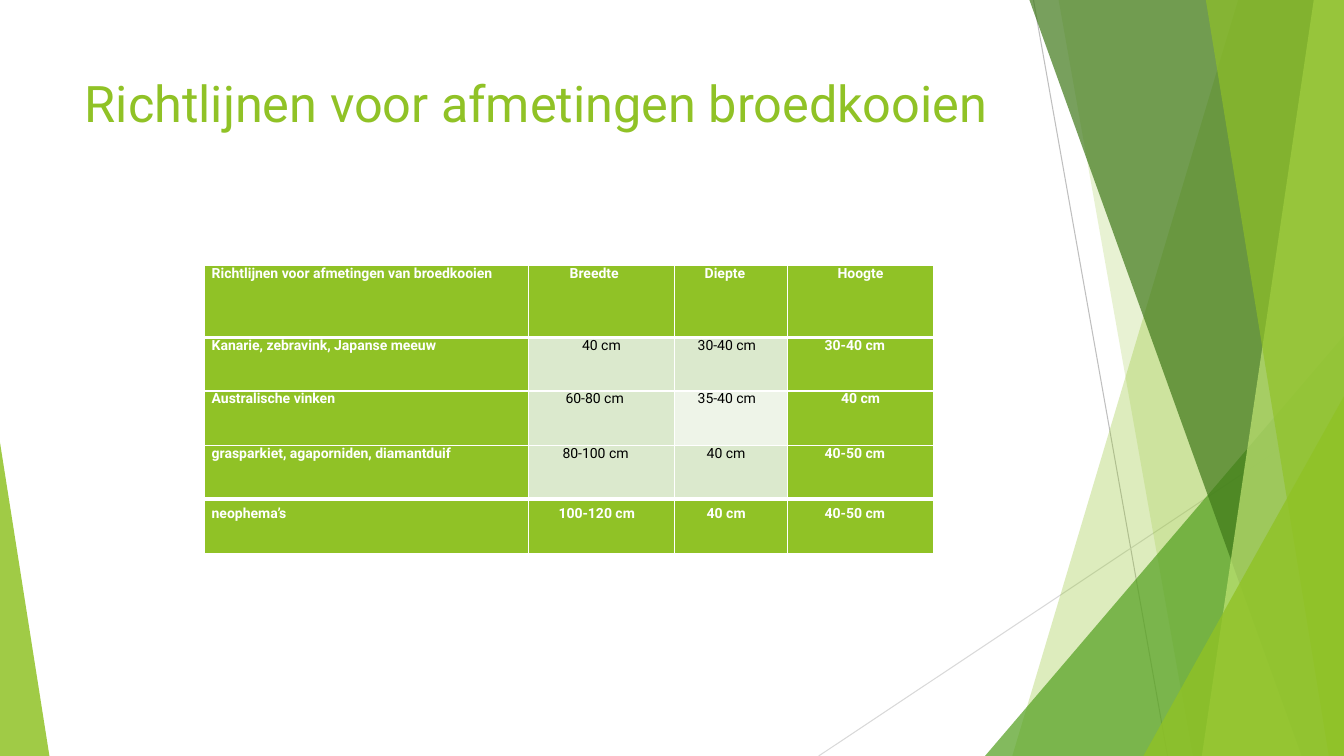
from dataclasses import dataclass

from lxml import etree
from pptx import Presentation
from pptx.dml.color import RGBColor
from pptx.enum.shapes import MSO_CONNECTOR as Connector, MSO_SHAPE as Shape
from pptx.enum.text import MSO_ANCHOR as Anchor, MSO_AUTO_SIZE as AutoSize, PP_ALIGN as Align
from pptx.oxml import parse_xml
from pptx.oxml.ns import nsdecls, qn
from pptx.util import Inches, Pt


@dataclass(frozen=True)
class Theme:
    """Colours, font and type sizes of the slide."""
    font: str = "Roboto"
    green: str = "90C226"
    grass: str = "54A021"
    forest: str = "3F7819"
    lime: str = "C0E474"
    pale: str = "DBE9CD"
    palest: str = "EEF4E8"
    white: str = "FFFFFF"
    black: str = "000000"
    line: str = "BFBFBF"
    faint_line: str = "D9D9D9"
    title_size: int = 36
    table_size: int = 10


THEME = Theme()
WIDTH, HEIGHT = 13.33, 7.5
COLUMNS = (3.21, 1.45, 1.12, 1.45)
ROWS = (0.72, 0.53, 0.54, 0.53, 0.54)
LABEL_INDENT = 0.07
CENTRED = None

GUIDE_ROWS = (
    (("Richtlijnen voor afmetingen van broedkooien", LABEL_INDENT),
     ("Breedte", 0.41), ("Diepte", 0.3), ("Hoogte", CENTRED)),
    (("Kanarie, zebravink, Japanse meeuw", LABEL_INDENT),
     ("40 cm", CENTRED), ("30-40 cm", 0.23), ("30-40 cm", 0.37)),
    (("Australische vinken", LABEL_INDENT),
     ("60-80 cm", 0.37), ("35-40 cm", 0.23), ("40 cm", CENTRED)),
    (("grasparkiet, agaporniden, diamantduif", LABEL_INDENT),
     ("80-100 cm", 0.34), ("40 cm", 0.32), ("40-50 cm", 0.37)),
    (("neophema’s", LABEL_INDENT),
     ("100-120 cm", 0.3), ("40 cm", 0.32), ("40-50 cm", 0.37)),
)


def add_run(paragraph, text, size, color, bold=False):
    """Add one formatted run to a paragraph."""
    run = paragraph.add_run()
    run.text = text
    run.font.name = THEME.font
    run.font.size = Pt(size)
    run.font.bold = bold
    run.font.color.rgb = RGBColor.from_string(color)


def paint(shape, color, opacity):
    """Give a shape a translucent fill without line or shadow."""
    shape.shadow.inherit = False
    shape.line.fill.background()
    shape.fill.solid()
    shape.fill.fore_color.rgb = RGBColor.from_string(color)
    color_element = shape.fill._xPr.find(qn("a:solidFill"))[0]
    etree.SubElement(color_element, qn("a:alpha"), val=str(opacity * 1000))


def add_thin_line(slide, start, end, color):
    """Draw a thin straight line between two points."""
    line = slide.shapes.add_connector(
        Connector.STRAIGHT, *(Inches(value) for value in start + end))
    line.line.width = Pt(0.75)
    line.line.color.rgb = RGBColor.from_string(color)
    etree.SubElement(line._element.spPr, qn("a:effectLst"))


def add_band(slide, top_left, bottom_left, color, opacity):
    """Draw a full-height band reaching the right edge of the slide."""
    corners = ((top_left, 0), (WIDTH, 0), (WIDTH, HEIGHT), (bottom_left, HEIGHT))
    points = [(Inches(x), Inches(y)) for x, y in corners]
    builder = slide.shapes.build_freeform(*points[0], scale=1.0)
    builder.add_line_segments(points[1:], close=True)
    paint(builder.convert_to_shape(), color, opacity)


def add_corner(slide, left, top, width, apex, color, opacity):
    """Draw a triangle that stands on the bottom edge of the slide."""
    shape = slide.shapes.add_shape(
        Shape.ISOSCELES_TRIANGLE, Inches(left), Inches(top),
        Inches(width), Inches(HEIGHT - top))
    shape.adjustments[0] = apex
    paint(shape, color, opacity)


def add_facets(slide):
    """Draw the green facets along the slide edges."""
    add_thin_line(slide, (10.25, 0), (11.58, HEIGHT), THEME.line)
    add_thin_line(slide, (WIDTH, 4.03), (8.12, HEIGHT), THEME.faint_line)
    add_band(slide, 12.28, 10.04, THEME.green, 30)
    add_band(slide, 10.5, 11.83, THEME.green, 20)
    add_corner(slide, 9.77, 3.33, 3.56, 1, THEME.grass, 72)
    add_band(slide, 10.21, 12.91, THEME.forest, 70)
    add_band(slide, 13.03, 11.92, THEME.lime, 70)
    add_band(slide, 11.96, 13.18, THEME.green, 65)
    add_corner(slide, 11.34, 3.93, 1.99, 1, THEME.green, 80)
    add_corner(slide, 0, 4.39, 0.49, 0, THEME.green, 85)


def set_title(slide, text):
    """Place and format the title in front of the facets."""
    title = slide.shapes.title
    title.left, title.top = Inches(0.74), Inches(0.67)
    title.width, title.height = Inches(9.4), Inches(1.44)
    frame = title.text_frame
    frame.word_wrap = True
    frame.auto_size = AutoSize.NONE
    frame.vertical_anchor = Anchor.TOP
    paragraph = frame.paragraphs[0]
    paragraph.alignment = Align.LEFT
    add_run(paragraph, text, THEME.title_size, THEME.green)
    slide.shapes._spTree.append(title._element)


def set_borders(cell, top, bottom):
    """Give a cell white borders, with the widths of top and bottom in points."""
    properties = cell._tc.get_or_add_tcPr()
    for side, width in (("L", 1), ("R", 1), ("T", top), ("B", bottom)):
        properties.append(parse_xml(
            f'<a:ln{side} {nsdecls("a")} w="{Pt(width)}"><a:solidFill>'
            f'<a:srgbClr val="{THEME.white}"/></a:solidFill></a:ln{side}>'))


def cell_fill(row, column):
    """Choose the fill of a cell: green on the rim, pale inside."""
    if row in (0, len(ROWS) - 1) or column in (0, len(COLUMNS) - 1):
        return THEME.green
    return THEME.palest if (row, column) == (2, 2) else THEME.pale


def fill_cell(cell, row, column, text, indent):
    """Format one table cell and write its text."""
    last = len(ROWS) - 1
    set_borders(cell, 3 if row in (1, last) else 1, 3 if row in (0, last - 1) else 1)
    color = cell_fill(row, column)
    cell.fill.solid()
    cell.fill.fore_color.rgb = RGBColor.from_string(color)
    cell.margin_left = Inches(indent or 0)
    cell.margin_right = cell.margin_bottom = 0
    cell.margin_top = Inches(0.07 if row == last else 0)
    cell.vertical_anchor = Anchor.TOP
    paragraph = cell.text_frame.paragraphs[0]
    paragraph.alignment = Align.CENTER if indent is CENTRED else Align.LEFT
    on_green = color == THEME.green
    add_run(paragraph, text, THEME.table_size,
            THEME.white if on_green else THEME.black, on_green)


def add_guide_table(slide):
    """Add the table with cage sizes."""
    table = slide.shapes.add_table(
        len(ROWS), len(COLUMNS), Inches(2.03), Inches(2.63),
        Inches(sum(COLUMNS)), Inches(sum(ROWS))).table
    table.first_row = table.horz_banding = False
    for column, width in zip(table.columns, COLUMNS):
        column.width = Inches(width)
    for row, height in zip(table.rows, ROWS):
        row.height = Inches(height)
    for row, entries in enumerate(GUIDE_ROWS):
        for column, (text, indent) in enumerate(entries):
            fill_cell(table.cell(row, column), row, column, text, indent)


def main():
    """Build and save the slide."""
    presentation = Presentation()
    presentation.slide_width = Inches(WIDTH)
    presentation.slide_height = Inches(HEIGHT)
    slide = presentation.slides.add_slide(presentation.slide_layouts[5])
    add_facets(slide)
    set_title(slide, "Richtlijnen voor afmetingen broedkooien")
    add_guide_table(slide)
    presentation.save("out.pptx")


if __name__ == "__main__":
    main()
